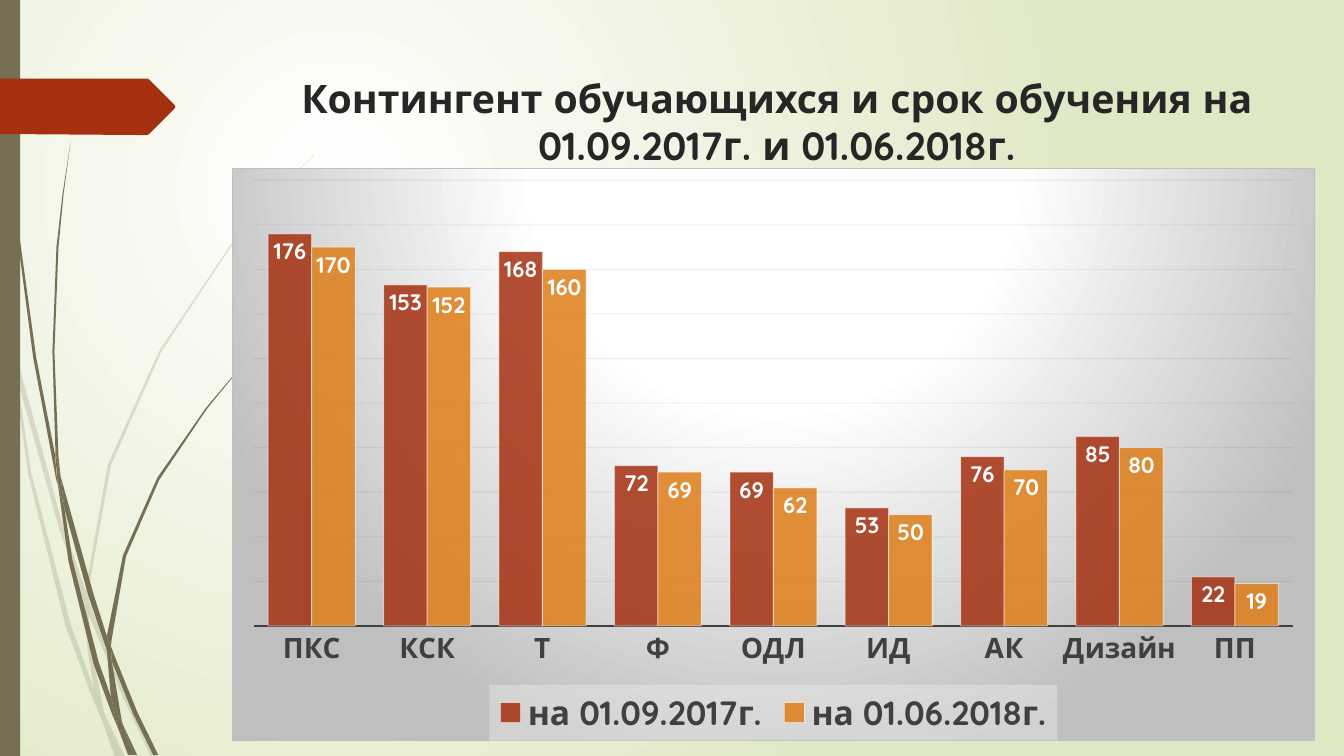
"""Build the slide comparing student numbers at two dates."""
from dataclasses import dataclass

from pptx import Presentation
from pptx import util as u
from pptx.chart import data as chart_data
from pptx.chart.chart import Chart
from pptx.dml import color, fill as dml_fill
from pptx.enum import chart as chart_enum, shapes, text
from pptx.oxml import ns, parse_xml
from pptx.slide import Slide

FONT = "Quicksand"
OLIVE, RUST, ORANGE = "766F54", "A53010", "DE7E18"
WHITE, DARK, SILVER = "FFFFFF", "404040", "BFBFBF"


@dataclass(frozen=True)
class Outline:
    """A closed shape given by its corners in inches."""
    corners: tuple[tuple[float, float], ...]
    hex_color: str = OLIVE
    opacity: int = 100


@dataclass(frozen=True)
class Intake:
    """Student numbers at one date."""
    name: str
    values: tuple[int, ...]
    hex_color: str


PALE_BLADES = (
    ((0.11, 3.5), (0.09, 3.22), (0, 2.82), (0, 2.99), (0.1, 3.44)),
    ((0.58, 5.22), (0.84, 5.99), (0.85, 5.86), (0.62, 5.2), (0.14, 3.45), (0.17, 3.76)),
    ((0.92, 6.07), (0.88, 5.96), (0.88, 6.1), (1.23, 6.94), (1.5, 7.51), (1.55, 7.51),
     (1.27, 6.92)),
    ((1.19, 7.51), (1.24, 7.51), (1.05, 7.11)),
    ((0.93, 6.83), (0.7, 6.19), (0.31, 4.69), (0.17, 3.76), (0.11, 3.5), (0.28, 4.7),
     (0.65, 6.21), (0.92, 6.93), (1.01, 7.14), (0.99, 7.07)),
    ((0.84, 5.99), (0.87, 6.46), (0.93, 6.83), (0.96, 6.92), (1.05, 7.11), (1.03, 7.06),
     (0.91, 6.46), (0.88, 6.1), (0.88, 6.08)),
    ((0.88, 5.84), (1.1, 4.62), (1.6, 3.49), (2.29, 2.45), (2.68, 1.98), (2.9, 1.75),
     (3.12, 1.54), (3.12, 1.53), (2.89, 1.75), (2.68, 1.97), (2.28, 2.44), (1.58, 3.48),
     (1.07, 4.61), (0.85, 5.84), (0.85, 5.86), (0.88, 5.96)),
    ((1.01, 7.14), (1.14, 7.51), (1.19, 7.51)),
    ((0.88, 6.08), (0.88, 6.1), (0.88, 5.96), (0.85, 5.86), (0.84, 5.99)),
    ((0.96, 6.92), (0.93, 6.83), (0.99, 7.07), (1.01, 7.14), (1.19, 7.51), (1.05, 7.11)),
)
DARK_BLADES = (
    ((0.07, 1.1), (0.17, 2.33), (0.33, 3.55), (0.56, 4.77), (0.57, 4.81), (0.55, 4.57),
     (0.55, 4.53), (0.36, 3.55), (0.19, 2.32), (0.08, 1.09), (0.05, 0.48), (0.04, 0),
     (0.03, 0), (0.04, 0.48)),
    ((0.88, 5.92), (1.06, 6.45), (1.06, 6.33), (1.06, 6.31), (0.93, 5.9), (0.6, 4.72),
     (0.64, 5.05)),
    ((1.13, 6.49), (1.1, 6.41), (1.11, 6.56), (1.32, 7.08), (1.52, 7.49), (1.57, 7.49),
     (1.36, 7.06)),
    ((1.1, 6.91), (0.98, 6.57), (0.72, 5.56), (0.64, 5.05), (0.57, 4.77), (0.68, 5.57),
     (0.93, 6.59), (1.11, 7.08), (1.17, 7.22), (1.16, 7.17)),
    ((0.6, 4.72), (0.58, 4.53), (0.54, 3.49), (0.58, 2.45), (0.63, 1.93), (0.7, 1.41),
     (0.62, 1.93), (0.56, 2.45), (0.52, 3.49), (0.55, 4.49)),
    ((1.33, 7.49), (1.36, 7.49), (1.22, 7.19)),
    ((0.57, 4.77), (0.64, 5.05), (0.6, 4.72), (0.55, 4.49), (0.55, 4.53)),
    ((1.11, 6.33), (1.25, 5.52), (1.58, 4.76), (2.05, 4.06), (2.31, 3.74), (2.45, 3.59),
     (2.61, 3.44), (2.6, 3.44), (2.45, 3.58), (2.31, 3.73), (2.04, 4.05), (1.56, 4.74),
     (1.22, 5.51), (1.06, 6.31), (1.1, 6.41)),
    ((1.17, 7.22), (1.27, 7.49), (1.31, 7.49)),
    ((1.06, 6.45), (1.1, 6.91), (1.16, 7.06), (1.22, 7.19), (1.21, 7.16), (1.11, 6.56),
     (1.09, 6.51)),
    ((1.06, 6.45), (1.09, 6.51), (1.11, 6.56), (1.1, 6.41), (1.06, 6.31)),
    ((1.16, 7.06), (1.1, 6.91), (1.16, 7.17), (1.17, 7.22), (1.3, 7.49), (1.33, 7.49),
     (1.22, 7.19)),
)
ARROW = Outline(((0, 0.78), (1.46, 0.78), (1.48, 0.79), (1.73, 1.04), (1.74, 1.06),
                 (1.73, 1.08), (1.48, 1.33), (1.46, 1.34), (1.36, 1.34), (0, 1.33)), RUST)
DEPARTMENTS = ("ПКС", "КСК", "Т", "Ф", "ОДЛ", "ИД", "АК", "Дизайн", "ПП")
INTAKES = (
    Intake("на 01.09.2017г.", (176, 153, 168, 72, 69, 53, 76, 85, 22), RUST),
    Intake("на 01.06.2018г.", (170, 152, 160, 69, 62, 50, 70, 80, 19), ORANGE),
)


def rgb(hex_color: str) -> color.RGBColor:
    """Turn a hex string into a colour."""
    return color.RGBColor.from_string(hex_color)


def paint(fill: dml_fill.FillFormat, hex_color: str) -> None:
    """Apply a solid fill."""
    fill.solid()
    fill.fore_color.rgb = rgb(hex_color)


def fade(element, query: str, opacity: int) -> None:
    """Set the opacity of the colours that the query finds."""
    for found in element.xpath(query):
        found.append(parse_xml(f'<a:alpha {ns.nsdecls("a")} val="{opacity * 1000}"/>'))


def radial_xml(stops: dict[int, str], focus: tuple[int, int, int, int]) -> str:
    """Describe a circular gradient with its focus rectangle."""
    stop_xml = "".join(f'<a:gs pos="{place * 1000}"><a:srgbClr val="{tint}"/></a:gs>'
                       for place, tint in stops.items())
    sides = " ".join(f'{side}="{share * 1000}"' for side, share in zip("ltrb", focus))
    return (f'<a:gradFill {ns.nsdecls("a")} rotWithShape="1"><a:gsLst>{stop_xml}</a:gsLst>'
            f'<a:path path="circle"><a:fillToRect {sides}/></a:path></a:gradFill>')


def style_font(font, size: int, hex_color: str, bold: bool = True) -> None:
    """Set typeface, size, weight and colour."""
    font.name, font.size, font.bold = FONT, u.Pt(size), bold
    font.color.rgb = rgb(hex_color)


def finish_shape(shape, hex_color: str) -> None:
    """Fill a shape and remove its outline and shadow."""
    shape.shadow.inherit = False
    paint(shape.fill, hex_color)
    shape.line.fill.background()


def draw_outline(slide: Slide, outline: Outline) -> None:
    """Draw one closed shape."""
    corners = [(u.Inches(x), u.Inches(y)) for x, y in outline.corners]
    builder = slide.shapes.build_freeform(*corners[0], scale=1.0)
    builder.add_line_segments(corners[1:], close=True)
    shape = builder.convert_to_shape()
    finish_shape(shape, outline.hex_color)
    if outline.opacity < 100:
        fade(shape.element, "./p:spPr/a:solidFill/a:srgbClr", outline.opacity)


def draw_title(slide: Slide) -> None:
    """Add the centred heading."""
    box = slide.shapes.add_textbox(u.Inches(2.83), u.Inches(0.69), u.Inches(9.75), u.Inches(1.4))
    box.text_frame.word_wrap = True
    box.text_frame.vertical_anchor = text.MSO_ANCHOR.TOP
    paragraph = box.text_frame.paragraphs[0]
    paragraph.alignment = text.PP_ALIGN.CENTER
    run = paragraph.add_run()
    run.text = "Контингент обучающихся и срок обучения на 01.09.2017г. и 01.06.2018г."
    style_font(run.font, 28, "262626")


def style_axes(chart: Chart) -> None:
    """Format the category axis and the hidden value axis."""
    category, value = chart.category_axis, chart.value_axis
    category.major_tick_mark = category.minor_tick_mark = chart_enum.XL_TICK_MARK.NONE
    style_font(category.tick_labels.font, 20, DARK)
    category.format.line.color.rgb = rgb(DARK)
    category.format.line.width = u.Pt(1.5)
    value.visible = False
    value.minimum_scale, value.maximum_scale, value.major_unit = 0, 200, 20
    grid = value.major_gridlines.format.line
    grid.color.rgb, grid.width = rgb("0D0D0D"), u.Pt(0.75)
    fade(chart.element, ".//c:majorGridlines//a:srgbClr", 5)


def style_frame(chart: Chart) -> None:
    """Format the chart area, plot position and legend."""
    declared = ns.nsdecls("c", "a")
    area = radial_xml({0: WHITE, 39: WHITE, 100: SILVER}, (50, -80, 50, 180))
    chart.element.find(ns.qn("c:chart")).addnext(parse_xml(
        f'<c:spPr {declared}>{area}<a:ln w="9525"><a:solidFill><a:srgbClr val="{SILVER}"/>'
        '</a:solidFill></a:ln></c:spPr>'))
    plot_area = chart.element.xpath(".//c:plotArea")[0]
    for layout in plot_area.findall(ns.qn("c:layout")):
        plot_area.remove(layout)
    bounds = "".join(f'<c:{name} val="{share}"/>' for name, share in
                     (("x", 0.02), ("y", 0.02), ("w", 0.96), ("h", 0.78)))
    plot_area.insert(0, parse_xml(
        f'<c:layout {declared}><c:manualLayout><c:layoutTarget val="inner"/>'
        f'<c:xMode val="edge"/><c:yMode val="edge"/>{bounds}</c:manualLayout></c:layout>'))
    chart.has_legend = True
    chart.legend.position = chart_enum.XL_LEGEND_POSITION.BOTTOM
    chart.legend.include_in_layout = False
    style_font(chart.legend.font, 24, DARK)
    chart.element.xpath(".//c:legend/c:overlay")[0].addnext(parse_xml(
        f'<c:spPr {declared}><a:solidFill><a:srgbClr val="F2F2F2"><a:alpha val="39000"/>'
        '</a:srgbClr></a:solidFill></c:spPr>'))


def draw_chart(slide: Slide) -> None:
    """Add the column chart of students by department."""
    numbers = chart_data.CategoryChartData()
    numbers.categories = DEPARTMENTS
    for intake in INTAKES:
        numbers.add_series(intake.name, intake.values)
    chart = slide.shapes.add_chart(
        chart_enum.XL_CHART_TYPE.COLUMN_CLUSTERED, u.Inches(2.3), u.Inches(1.67),
        u.Inches(10.74), u.Inches(5.68), numbers).chart
    chart.has_title = False
    style_font(chart.font, 10, "000000", bold=False)
    plot = chart.plots[0]
    plot.vary_by_categories, plot.gap_width, plot.overlap = False, 65, 0
    for series, intake in zip(plot.series, INTAKES):
        paint(series.format.fill, intake.hex_color)
        series.format.line.color.rgb = rgb(WHITE)
        series.format.line.width = u.Pt(0.75)
        labels = series.data_labels
        labels.show_value = True
        labels.position = chart_enum.XL_LABEL_POSITION.INSIDE_END
        style_font(labels.font, 16, WHITE)
    fade(chart.element, ".//c:ser/c:spPr/a:solidFill/a:srgbClr", 85)
    fade(chart.element, ".//c:ser/c:spPr/a:ln//a:srgbClr", 50)
    style_axes(chart)
    style_frame(chart)


def main() -> None:
    """Compose and save the slide."""
    presentation = Presentation()
    presentation.slide_width, presentation.slide_height = u.Inches(13.33), u.Inches(7.5)
    slide = presentation.slides.add_slide(presentation.slide_layouts[6])
    slide.background.fill.gradient()
    backdrop = slide.element.xpath(".//p:bgPr/a:gradFill")[0]
    backdrop.getparent().replace(
        backdrop, parse_xml(radial_xml({0: WHITE, 100: "DFE8C4"}, (50, 50, 100, 100))))
    for blades, opacity in ((PALE_BLADES, 20), (DARK_BLADES, 100)):
        for corners in blades:
            draw_outline(slide, Outline(corners, opacity=opacity))
    finish_shape(slide.shapes.add_shape(
        shapes.MSO_SHAPE.RECTANGLE, 0, 0, u.Inches(0.2), u.Inches(7.5)), OLIVE)
    draw_outline(slide, ARROW)
    draw_title(slide)
    draw_chart(slide)
    presentation.save("out.pptx")


if __name__ == "__main__":
    main()
